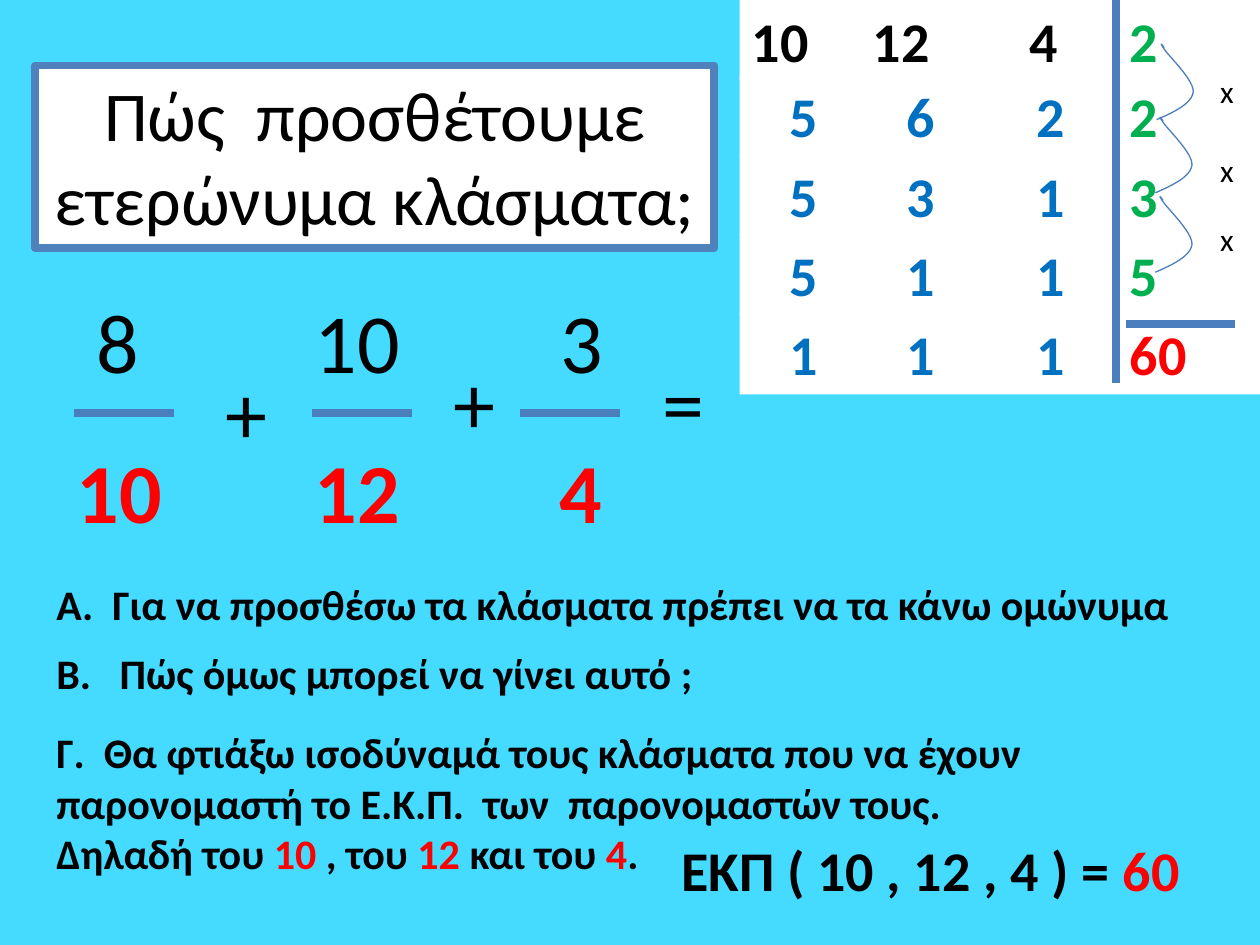
"""Build a slide on adding fractions with different denominators."""
import pptx
import pptx.util
import pptx.dml.color
import pptx.enum.shapes
import pptx.enum.text
import pptx.oxml
import pptx.oxml.ns

Inches = pptx.util.Inches
Pt = pptx.util.Pt
RGBColor = pptx.dml.color.RGBColor

SKY = RGBColor(0x45, 0xDA, 0xFF)
WHITE = RGBColor(0xFF, 0xFF, 0xFF)
BLACK = RGBColor(0x00, 0x00, 0x00)
RED = RGBColor(0xFF, 0x00, 0x00)
GREEN = RGBColor(0x00, 0xB0, 0x50)
BLUE = RGBColor(0x00, 0x70, 0xC0)
BORDER = RGBColor(0x4F, 0x81, 0xBD)
RULE = RGBColor(0x4B, 0x7E, 0xBC)


def write(parent, box, paragraphs, size, bold=False, fill=None, tabs=(), align="LEFT"):
    edges = [Inches(value) for value in box]
    if fill is None:
        shape = parent.add_textbox(*edges)
    else:
        shape = parent.add_shape(pptx.enum.shapes.MSO_SHAPE.RECTANGLE, *edges)
        shape.shadow.inherit = False
        shape.fill.solid()
        shape.fill.fore_color.rgb = fill
        shape.line.fill.background()
    frame = shape.text_frame
    frame_format = {
        "word_wrap": True,
        "auto_size": pptx.enum.text.MSO_AUTO_SIZE.SHAPE_TO_FIT_TEXT,
        "vertical_anchor": pptx.enum.text.MSO_ANCHOR.TOP,
    }
    for name, value in frame_format.items():
        setattr(frame, name, value)
    for index, pieces in enumerate(paragraphs):
        paragraph = frame.add_paragraph() if index else frame.paragraphs[0]
        paragraph.alignment = getattr(pptx.enum.text.PP_ALIGN, align)
        if tabs:
            stops = pptx.oxml.ns.qn("a:tabLst")
            tab_list = paragraph._p.get_or_add_pPr().makeelement(stops, {})
            paragraph._p.get_or_add_pPr().append(tab_list)
            for stop in tabs:
                tab = tab_list.makeelement(
                    pptx.oxml.ns.qn("a:tab"), {"pos": str(Inches(stop)), "algn": "l"})
                tab_list.append(tab)
        for text, color in pieces:
            run = paragraph.add_run()
            run.text = text
            for name, value in {"name": "Calibri", "size": Pt(size), "bold": bold}.items():
                setattr(run.font, name, value)
            run.font.color.rgb = color
    return shape


def rule(parent, x1, y1, x2, y2):
    line = parent.add_connector(
        pptx.enum.shapes.MSO_CONNECTOR.STRAIGHT, *[Inches(v) for v in (x1, y1, x2, y2)])
    line.line.color.rgb = RULE
    line.line.width = Pt(4.5)
    properties = line._element.spPr
    properties.append(properties.makeelement(pptx.oxml.ns.qn("a:effectLst"), {}))


presentation = pptx.Presentation()
presentation.slide_width = Inches(10)
presentation.slide_height = Inches(7.5)
slide = presentation.slides.add_slide(presentation.slide_layouts[6])
slide.background.fill.solid()
slide.background.fill.fore_color.rgb = SKY

title = write(slide.shapes, (0.28, 0.52, 5.39, 1.45),
              [[("Πώς  προσθέτουμε ετερώνυμα κλάσματα;", BLACK)]], 40, fill=WHITE, align="CENTER")
title.line.color.rgb = BORDER
title.line.width = Pt(4.5)

fractions = [
    ("8", 0.67, "10", 0.51, 0.59),
    ("10", 2.4, "12", 2.4, 2.48),
    ("3", 4.35, "4", 4.34, 4.13),
]
for numerator, top_left, denominator, bottom_left, bar_left in fractions:
    fraction = slide.shapes.add_group_shape().shapes
    write(fraction, (top_left, 2.25, 1.1, 1.21), [[(numerator, BLACK)]], 48)
    write(fraction, (bottom_left, 3.44, 1.1, 1.21), [[(denominator, RED)]], 48, True)
    rule(fraction, bar_left, 3.28, bar_left + 0.79, 3.28)

for sign, left, top in [("+", 1.69, 2.81), ("+", 3.5, 2.73), ("=", 5.16, 2.73)]:
    write(slide.shapes, (left, top, 0.71, 0.91), [[(sign, BLACK)]], 48)

steps = [
    (4.54, 0.5, [[("Α.  Για να προσθέσω τα κλάσματα πρέπει να τα κάνω ομώνυμα", BLACK)]]),
    (5.09, 0.5, [[("Β.   Πώς όμως μπορεί να γίνει αυτό ;", BLACK)]]),
    (5.72, 1.34, [
        [("Γ.  Θα φτιάξω ισοδύναμά τους κλάσματα που να έχουν παρονομαστή το "
          "Ε.Κ.Π.  των  παρονομαστών τους.", BLACK)],
        [("Δηλαδή του ", BLACK), ("10", RED), (" , του ", BLACK), ("12", RED),
         (" και του ", BLACK), ("4", RED), (".", BLACK)],
    ]),
]
for top, height, paragraphs in steps:
    write(slide.shapes, (0.35, top, 9.37, height), paragraphs, 24, True)

factoring = slide.shapes.add_group_shape().shapes
factor_rows = [
    (0, "10\t12\t4\t", BLACK, "2", GREEN),
    (0.6, "\t5\t6\t2\t", BLUE, "2", GREEN),
    (1.23, "\t5\t3\t1\t", BLUE, "3", GREEN),
    (1.86, "\t5\t1\t1\t", BLUE, "5", GREEN),
    (2.49, "\t1\t1\t1\t", BLUE, "60", RED),
]
for top, quotients, quotient_color, divisor, divisor_color in factor_rows:
    tabs = (0.3, 1.23, 2.26, 3) if quotients.startswith("\t") else (0.96, 2.2, 3)
    write(factoring, (5.87, top, 4.13, 0.64),
          [[(quotients, quotient_color), (divisor, divisor_color)]], 32, True, WHITE, tabs)
rule(factoring, 8.86, 0, 8.86, 3.04)
rule(factoring, 9.8, 2.57, 8.94, 2.57)

arc_curves = [
    [(0, 0.62), (0.14, 0.56), (0.28, 0.49), (0.29, 0.4)],
    [(0.29, 0.4), (0.3, 0.31), (0.1, 0.12), (0.06, 0.06)],
    [(0.06, 0.06), (0.02, 0), (0.04, 0.02), (0.06, 0.05)],
]
STEPS = 12
for left, top in [(9.18, 0.33), (9.17, 0.91), (9.17, 1.54)]:
    points = []
    for curve in arc_curves:
        for step in range(STEPS + 1):
            t = step / STEPS
            weights = ((1 - t) ** 3, 3 * t * (1 - t) ** 2, 3 * t ** 2 * (1 - t), t ** 3)
            x = sum(w * point[0] for w, point in zip(weights, curve))
            y = sum(w * point[1] for w, point in zip(weights, curve))
            points.append((Inches(left + x), Inches(top + y)))
    builder = factoring.build_freeform(*points[0])
    builder.add_line_segments(points[1:], close=False)
    arc = builder.convert_to_shape()
    arc.shadow.inherit = False
    arc.fill.background()
    arc.line.color.rgb = RULE
    arc.line.width = Pt(0.75)

for top in (0.52, 1.15, 1.7):
    write(factoring, (9.53, top, 0.47, 0.4), [[(" x", BLACK)]], 18)

write(slide.shapes, (5.31, 6.58, 4.25, 0.64),
      [[("ΕΚΠ ( 10 , 12 , 4 ) = ", BLACK), ("60", RED)]], 32, True)

presentation.save("out.pptx")
